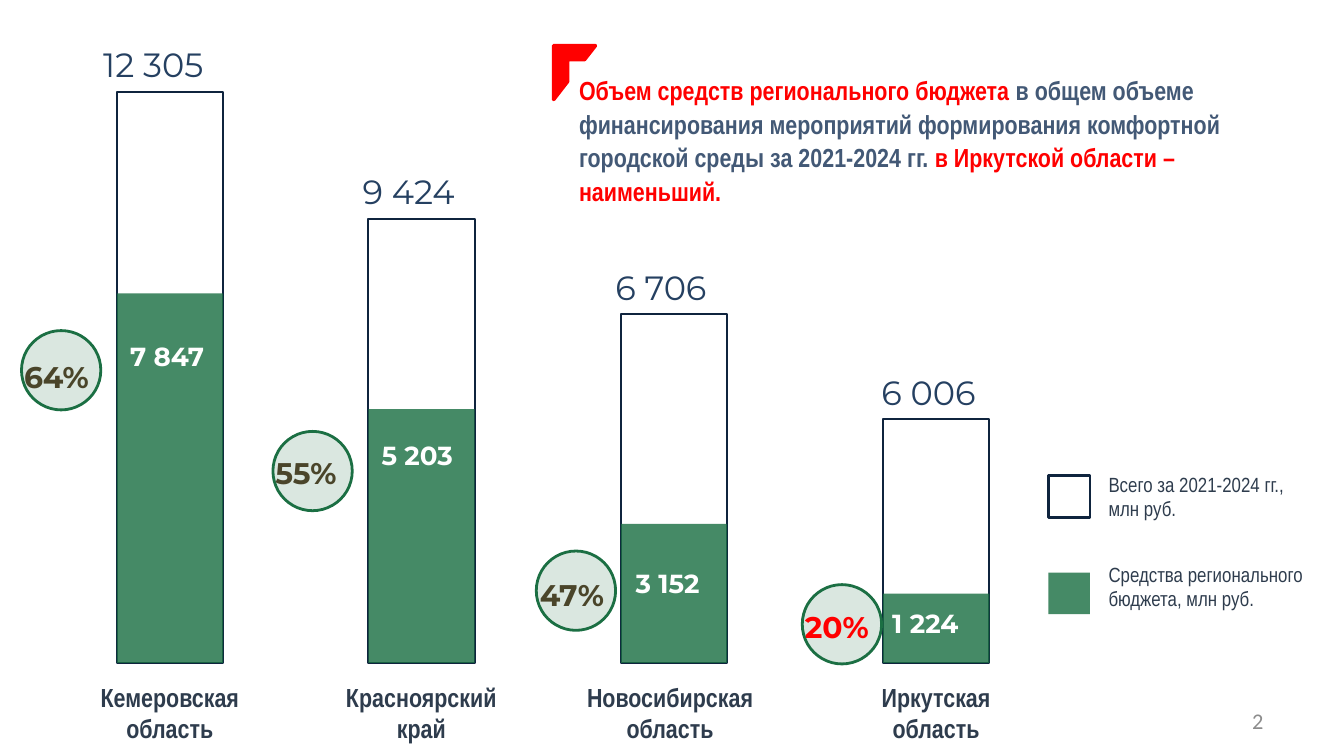
from lxml.etree import SubElement
from pptx import Presentation
from pptx.dml.color import RGBColor
from pptx.enum.shapes import MSO_SHAPE
from pptx.enum.text import MSO_ANCHOR, MSO_AUTO_SIZE, PP_ALIGN
from pptx.oxml.ns import qn
from pptx.util import Pt

GREEN, NAVY, RED, SLATE = "1B6F43", "0F243E", "FF0000", "2E3C4D"
BASELINE, BAR_WIDTH, CIRCLE_SIZE = 355.2, 57, 42.5
NAME_WIDTH, NAME_TOP = 112, 361.4
LEGEND_LEFT, LEGEND_BOX = 561.6, 22.3

HEADLINE = [
    ("Объем средств регионального бюджета ", RED),
    ("в общем объеме финансирования мероприятий формирования комфортной "
     "городской среды за 2021-2024 гг. ", "435976"),
    ("в Иркутской области – наименьший.", RED),
]

# Each label is (text, left, top); heights are those of the drawn bars.
REGIONS = [
    dict(name="Кемеровская\nобласть", name_center=91, bar_left=62.6,
         total_height=306, budget_height=198,
         total=("12 305", 48.2, 20.2), budget=("7 847", 62.6, 178.6),
         circle=(11.5, 177.1), share=("64%", 5.8, 188.6), share_color="4A452A"),
    dict(name="Красноярский край", name_center=225.7, bar_left=197.3,
         total_height=238, budget_height=136,
         total=("9 424", 187.2, 87.8), budget=("5 203", 197.3, 231.8),
         circle=(146.2, 231.1), share=("55%", 140.4, 239.8), share_color="4A452A"),
    dict(name="Новосибирская область", name_center=359, bar_left=332.6,
         total_height=187, budget_height=74.5,
         total=("6 706", 322.6, 139.7), budget=("3 152", 333.4, 300.2),
         circle=(287.3, 295.2), share=("47%", 282.2, 305.3), share_color="4A452A"),
    dict(name="Иркутская область", name_center=501.5, bar_left=473,
         total_height=130.5, budget_height=37.2,
         total=("6 006", 465.1, 195.8), budget=("1 224", 470.9, 321.8),
         circle=(429.8, 313.2), share=("20%", 424.1, 322.6), share_color=RED),
]

# (text, marker top, text top, is budget)
LEGEND = [
    ("Всего за 2021-2024 гг., млн руб.", 254.9, 249.1, False),
    ("Средства регионального бюджета, млн руб.", 306.7, 297.4, True),
]


def rgb(color):
    return RGBColor.from_string(color)


def format_run(run, font, size, color, bold=False):
    run.font.name = font
    run.font.size = Pt(size)
    run.font.bold = bold
    run.font.color.rgb = rgb(color)


def add_text(text, left, top, width, height, *, font, size, color, bold=False,
             align=PP_ALIGN.LEFT, anchor=MSO_ANCHOR.TOP):
    box = slide.shapes.add_textbox(Pt(left), Pt(top), Pt(width), Pt(height))
    frame = box.text_frame
    frame.word_wrap = True
    frame.vertical_anchor = anchor
    frame.text = text
    for paragraph in frame.paragraphs:
        paragraph.alignment = align
        for run in paragraph.runs:
            format_run(run, font, size, color, bold)


def add_figure(kind, left, top, width, height, fill=None, opacity=100,
               line=None, line_width=1):
    figure = slide.shapes.add_shape(kind, Pt(left), Pt(top), Pt(width), Pt(height))
    figure.shadow.inherit = False
    if fill:
        figure.fill.solid()
        figure.fill.fore_color.rgb = rgb(fill)
        if opacity < 100:
            color = figure.fill._xPr.find(qn("a:solidFill"))[0]
            SubElement(color, qn("a:alpha"), val=str(opacity * 1000))
    else:
        figure.fill.background()
    if line:
        figure.line.color.rgb = rgb(line)
        figure.line.width = Pt(line_width)
    else:
        figure.line.fill.background()


def add_headline():
    title = slide.shapes.title
    title.left, title.top, title.width, title.height = Pt(303), Pt(34.6), Pt(396.7), Pt(80)
    frame = title.text_frame
    frame.word_wrap = True
    frame.auto_size = MSO_AUTO_SIZE.NONE
    frame.vertical_anchor = MSO_ANCHOR.MIDDLE
    paragraph = frame.paragraphs[0]
    paragraph.alignment = PP_ALIGN.LEFT
    paragraph.line_spacing = 1.07
    paragraph.space_before = Pt(0)
    paragraph.space_after = Pt(8)
    for text, color in HEADLINE:
        run = paragraph.add_run()
        run.text = text
        format_run(run, "Arial Narrow", 14, color, bold=True)


def add_region(region):
    left = region["bar_left"]
    total_height, budget_height = region["total_height"], region["budget_height"]
    add_figure(MSO_SHAPE.RECTANGLE, left, BASELINE - total_height, BAR_WIDTH,
               total_height, line=NAVY)
    add_figure(MSO_SHAPE.RECTANGLE, left, BASELINE - budget_height, BAR_WIDTH,
               budget_height, fill=GREEN, opacity=81)
    add_figure(MSO_SHAPE.OVAL, *region["circle"], CIRCLE_SIZE, CIRCLE_SIZE,
               fill=GREEN, opacity=16, line=GREEN, line_width=1.5)
    add_text(*region["total"], 90, 29, font="Montserrat", size=18, color="254061")
    add_text(*region["budget"], 59, 24.5, font="Montserrat", size=14,
             color="FFFFFF", bold=True)
    add_text(*region["share"], 57, 26.6, font="Montserrat", size=16,
             color=region["share_color"], bold=True)
    add_text(region["name"], region["name_center"] - NAME_WIDTH / 2, NAME_TOP,
             NAME_WIDTH, 41.8, font="Arial Narrow", size=14, color=SLATE,
             bold=True, align=PP_ALIGN.CENTER)


prs = Presentation()
prs.slide_width, prs.slide_height = Pt(720), Pt(405)
slide = prs.slides.add_slide(prs.slide_layouts[5])

add_headline()
add_figure(MSO_SHAPE.HALF_FRAME, 296.6, 24.5, 22.3, 28.8, fill=RED, line=RED, line_width=2)

for region in REGIONS:
    add_region(region)

for text, marker_top, text_top, is_budget in LEGEND:
    style = dict(fill=GREEN, opacity=81) if is_budget else dict(line=NAVY, line_width=1.5)
    add_figure(MSO_SHAPE.RECTANGLE, LEGEND_LEFT, marker_top, LEGEND_BOX, LEGEND_BOX, **style)
    add_text(text, 586.8, text_top, 127, 33.8, font="Arial Narrow", size=11, color=SLATE)

add_text("2", 516.2, 375.1, 167.8, 21.6, font="Calibri", size=12, color="8C8C8C",
         align=PP_ALIGN.RIGHT, anchor=MSO_ANCHOR.MIDDLE)

prs.save("out.pptx")
